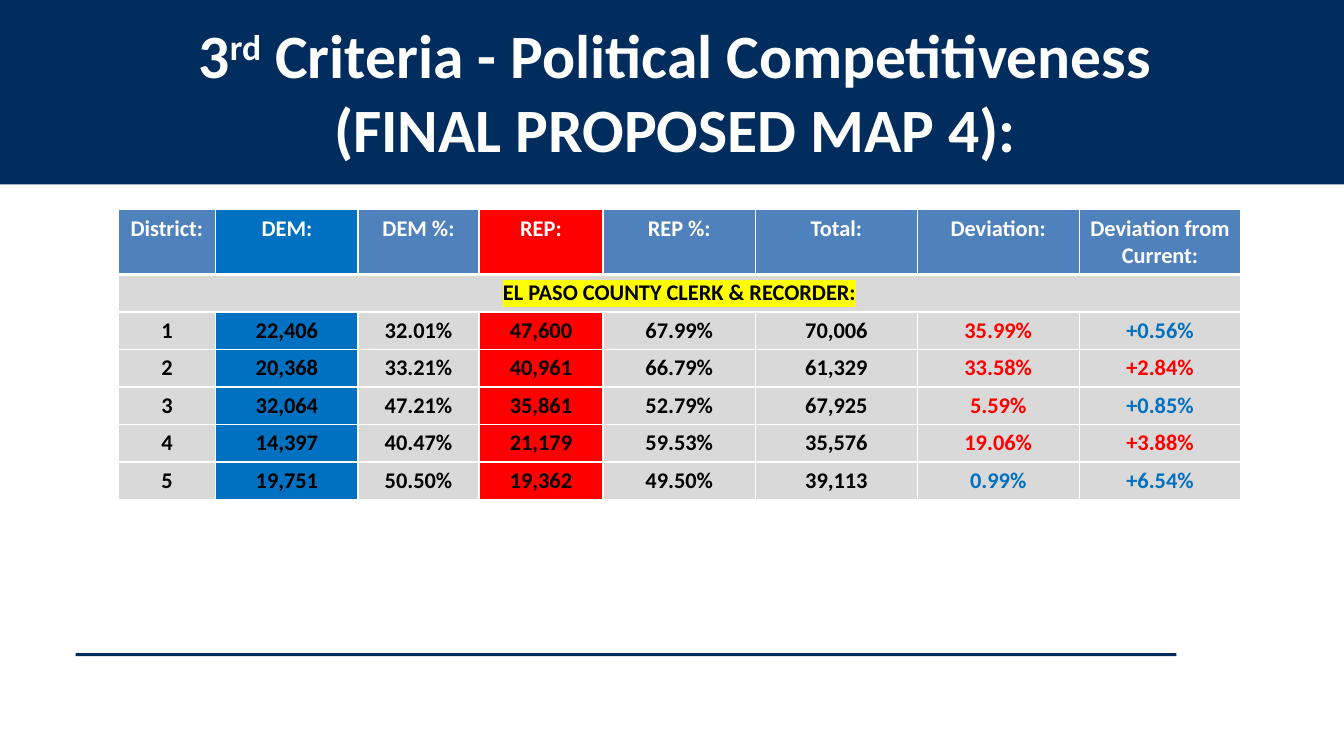
from lxml.etree import SubElement
from pptx import Presentation
from pptx.dml.color import RGBColor
from pptx.enum.shapes import MSO_SHAPE
from pptx.enum.text import MSO_ANCHOR, MSO_AUTO_SIZE, PP_ALIGN
from pptx.oxml.ns import qn
from pptx.util import Inches, Pt

COLORS = {
    "navy": "002D5D", "header": "4F81BD", "dem": "0070C0", "rep": "FF0000",
    "gray": "D9D9D9", "yellow": "FFFF00", "white": "FFFFFF", "black": "000000",
}
HEADINGS = ["District:", "DEM:", "DEM %:", "REP:", "REP %:", "Total:",
            "Deviation:", "Deviation from Current:"]
SECTION = "EL PASO COUNTY CLERK & RECORDER:"
# Each district ends with the colors of its two deviations.
DISTRICTS = [
    ("1", "22,406", "32.01%", "47,600", "67.99%", "70,006", "35.99%", "+0.56%", "rep", "dem"),
    ("2", "20,368", "33.21%", "40,961", "66.79%", "61,329", "33.58%", "+2.84%", "rep", "rep"),
    ("3", "32,064", "47.21%", "35,861", "52.79%", "67,925", "5.59%", "+0.85%", "rep", "dem"),
    ("4", "14,397", "40.47%", "21,179", "59.53%", "35,576", "19.06%", "+3.88%", "rep", "rep"),
    ("5", "19,751", "50.50%", "19,362", "49.50%", "39,113", "0.99%", "+6.54%", "dem", "dem"),
]
PARTY_COLUMNS = {1: "dem", 3: "rep"}
COLUMN_SHARES = [7.28, 10.58, 9, 9.23, 11.35, 12.04, 12.04, 12.04]  # percent of slide width
HEADER_SHARE, ROW_SHARE = 8.27, 4.93  # percent of slide height

deck = Presentation()
deck.slide_width, deck.slide_height = Inches(13.33), Inches(7.5)
slide = deck.slides.add_slide(deck.slide_layouts[5])


def area(left, top, width, height):
    """Turn percentages of the slide into left, top, width and height."""
    sides = (deck.slide_width, deck.slide_height) * 2
    return [int(side * share / 100) for side, share in zip(sides, (left, top, width, height))]


def write(paragraph, text, size, color):
    """Add a bold centred run and return it."""
    paragraph.alignment = PP_ALIGN.CENTER
    run = paragraph.add_run()
    run.text = text
    for name, value in {"name": "Calibri", "size": Pt(size), "bold": True}.items():
        setattr(run.font, name, value)
    run.font.color.rgb = RGBColor.from_string(COLORS[color])
    return run


# Title band and footer rule
for bounds in [(0, -0.4, 100, 24.8), (5.63, 86.4, 81.9, 0.4)]:
    bar = slide.shapes.add_shape(MSO_SHAPE.RECTANGLE, *area(*bounds))
    bar.shadow.inherit = False
    bar.fill.solid()
    bar.fill.fore_color.rgb = RGBColor.from_string(COLORS["navy"])
    bar.line.fill.background()

# Title, brought in front of the band
title = slide.shapes.title
slide.shapes._spTree.append(title._element)
for name, value in zip(("left", "top", "width", "height"), area(4.2, 1.6, 88.37, 30.93)):
    setattr(title, name, value)
title_format = {"word_wrap": True, "auto_size": MSO_AUTO_SIZE.NONE,
                "vertical_anchor": MSO_ANCHOR.TOP}
for name, value in title_format.items():
    setattr(title.text_frame, name, value)
first_line = title.text_frame.paragraphs[0]
second_line = title.text_frame.add_paragraph()
write(first_line, "3", 44, "white")
ordinal = write(first_line, "rd", 44, "white")
ordinal._r.get_or_add_rPr().set("baseline", "30000")
write(first_line, " Criteria - Political Competitiveness", 44, "white")
write(second_line, "(FINAL PROPOSED MAP 4):", 44, "white")
for line in (first_line, second_line):
    properties = line._p.get_or_add_pPr()
    properties.set("marL", str(Inches(0.5)))
    properties.set("indent", "0")

# Competitiveness table
row_count = len(DISTRICTS) + 2
frame = slide.shapes.add_table(
    row_count, len(HEADINGS),
    *area(8.78, 27.73, sum(COLUMN_SHARES), HEADER_SHARE + ROW_SHARE * (row_count - 1)))
table = frame.table
table.horz_banding = False
for column, share in zip(table.columns, COLUMN_SHARES):
    column.width = int(deck.slide_width * share / 100)
for index, row in enumerate(table.rows):
    row.height = int(deck.slide_height * (ROW_SHARE if index else HEADER_SHARE) / 100)

table.cell(1, 0).merge(table.cell(1, len(HEADINGS) - 1))
section = write(table.cell(1, 0).text_frame.paragraphs[0], SECTION, 16, "black")
highlight = SubElement(section._r.get_or_add_rPr(), qn("a:highlight"))
SubElement(highlight, qn("a:srgbClr"), val=COLORS["yellow"])
section._r.rPr.find(qn("a:solidFill")).addnext(highlight)

for column, heading in enumerate(HEADINGS):
    write(table.cell(0, column).text_frame.paragraphs[0], heading, 16, "white")
for row, (*values, deviation_color, change_color) in enumerate(DISTRICTS, start=2):
    text_colors = ["black"] * 6 + [deviation_color, change_color]
    for column, (value, color) in enumerate(zip(values, text_colors)):
        write(table.cell(row, column).text_frame.paragraphs[0], value, 16, color)

# Cell borders and fills
for row in range(row_count):
    for column in range(len(HEADINGS)):
        cell = table.cell(row, column)
        for edge in ("lnL", "lnR", "lnT", "lnB"):
            heavy = (row, edge) in [(0, "lnB"), (1, "lnT")]
            border = SubElement(cell._tc.get_or_add_tcPr(), qn(f"a:{edge}"),
                                w=str(Pt(3 if heavy else 1)))
            SubElement(SubElement(border, qn("a:solidFill")), qn("a:srgbClr"),
                       val=COLORS["white"])
        base = "gray" if row else "header"
        fill = base if row == 1 else PARTY_COLUMNS.get(column, base)
        cell.fill.solid()
        cell.fill.fore_color.rgb = RGBColor.from_string(COLORS[fill])

deck.save("out.pptx")
